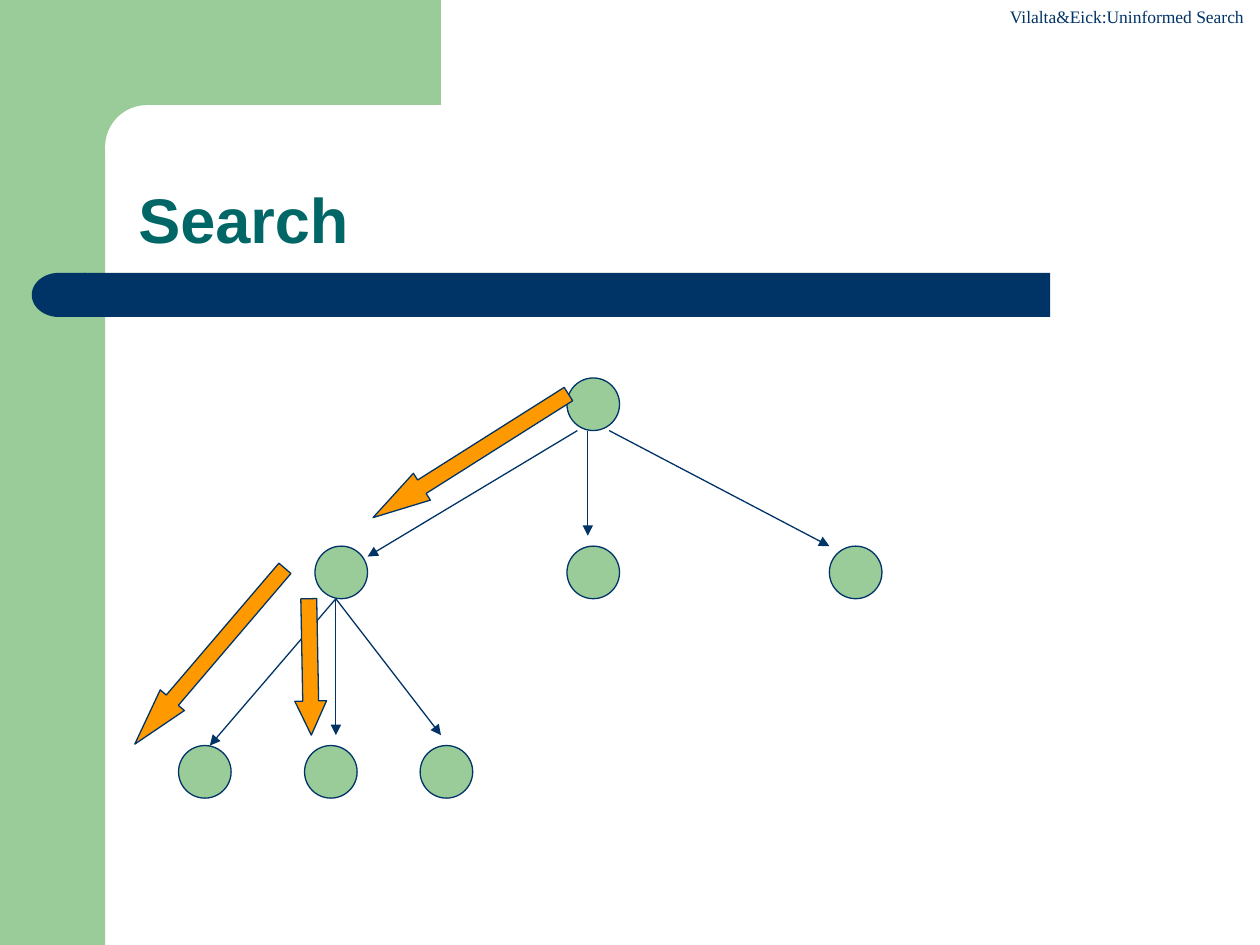
from lxml import etree
from pptx import Presentation
from pptx.dml.color import RGBColor
from pptx.enum.shapes import MSO_CONNECTOR, MSO_SHAPE
from pptx.enum.text import MSO_ANCHOR
from pptx.oxml.ns import qn
from pptx.util import Cm, Pt

RECTANGLE = MSO_SHAPE.RECTANGLE
ROUNDED = MSO_SHAPE.ROUNDED_RECTANGLE
DELAY = MSO_SHAPE.FLOWCHART_DELAY
OVAL = MSO_SHAPE.OVAL
DOWN_ARROW = MSO_SHAPE.DOWN_ARROW
STRAIGHT = MSO_CONNECTOR.STRAIGHT
TOP, BOTTOM = MSO_ANCHOR.TOP, MSO_ANCHOR.BOTTOM

COLORS = {
    "green": "99CC99",
    "white": "FFFFFF",
    "navy": "003366",
    "teal": "006666",
    "orange": "FF9900",
}
LINE_WIDTH = Pt(0.75)
NODE_SIZE = 1.06
ARROW_WIDTH = 0.64

# Left edges of the nodes on each level, keyed by the level's top
TREE_LEVELS = {
    7.62: [11.43],
    11.01: [6.35, 11.43, 16.72],
    15.03: [3.6, 6.14, 8.47],
}
EDGES = [
    ((11.64, 8.68), (7.41, 11.22)),
    ((11.85, 8.68), (11.85, 10.8)),
    ((12.28, 8.68), (16.72, 11.01)),
    ((6.77, 12.07), (4.23, 15.03)),
    ((6.77, 12.07), (6.77, 14.82)),
    ((6.77, 12.07), (8.89, 14.82)),
]
# Left, top, length, rotation
SEARCH_STEPS = [
    (9.17, 6.86, 4.66, 57.7),
    (3.91, 10.9, 4.66, 40.5),
    (5.93, 12.07, 2.75, 358.9),
]


def color(name):
    return RGBColor.from_string(COLORS[name])


def add_filled_shape(slide, kind, box, fill, outline=None):
    shape = slide.shapes.add_shape(kind, *map(Cm, box))
    shape.shadow.inherit = False
    shape.fill.solid()
    shape.fill.fore_color.rgb = color(fill)
    if outline:
        shape.line.color.rgb = color(outline)
        shape.line.width = LINE_WIDTH
    else:
        shape.line.fill.background()
    return shape


def add_text(slide, box, text, font_name, size, font_color,
             bold=False, anchor=TOP, wrap=True, spacing=1.0):
    frame = slide.shapes.add_textbox(*map(Cm, box)).text_frame
    frame.word_wrap = wrap
    frame.vertical_anchor = anchor
    paragraph = frame.paragraphs[0]
    paragraph.line_spacing = spacing
    run = paragraph.add_run()
    run.text = text
    run.font.name = font_name
    run.font.size = Pt(size)
    run.font.bold = bold
    run.font.color.rgb = color(font_color)


def add_edge(slide, start, end):
    """Draw a thin tree edge with an arrowhead at its end."""
    edge = slide.shapes.add_connector(STRAIGHT, *map(Cm, start + end))
    edge.line.color.rgb = color("navy")
    edge.line.width = LINE_WIDTH
    etree.SubElement(edge.line._get_or_add_ln(), qn("a:tailEnd"), type="triangle")
    etree.SubElement(edge._element.spPr, qn("a:effectLst"))


def add_search_step(slide, left, top, length, rotation):
    """Draw a block arrow whose head takes a quarter of its length."""
    arrow = add_filled_shape(slide, DOWN_ARROW, (left, top, ARROW_WIDTH, length),
                             "orange", "navy")
    arrow.adjustments[0] = 0.5
    arrow.adjustments[1] = length / ARROW_WIDTH / 4
    arrow.rotation = rotation


def add_frame(slide):
    """Draw the green corner, the title bar and the header."""
    add_filled_shape(slide, RECTANGLE, (0, 0, 2.12, 19.05), "green")
    add_filled_shape(slide, RECTANGLE, (1.9, 0, 6.99, 2.96), "green")
    corner = add_filled_shape(slide, ROUNDED, (2.12, 2.12, 14.18, 1.69), "white")
    corner.adjustments[0] = 0.5
    add_filled_shape(slide, RECTANGLE, (1.69, 5.5, 19.48, 0.89), "navy")
    bar_end = add_filled_shape(slide, DELAY, (0.64, 5.5, 1.09, 0.89), "navy")
    bar_end.rotation = 180
    add_text(slide, (20.11, 0, 5.29, 0.68), "Vilalta&Eick:Uninformed Search",
             "Times New Roman", 10, "navy", wrap=False)


def add_tree(slide):
    for top, lefts in TREE_LEVELS.items():
        for left in lefts:
            add_filled_shape(slide, OVAL, (left, top, NODE_SIZE, NODE_SIZE),
                             "green", "navy")
    for start, end in EDGES:
        add_edge(slide, start, end)
    for step in SEARCH_STEPS:
        add_search_step(slide, *step)


def main():
    presentation = Presentation()
    presentation.slide_width = Cm(25.4)
    presentation.slide_height = Cm(19.05)
    slide = presentation.slides.add_slide(presentation.slide_layouts[6])
    add_frame(slide)
    add_text(slide, (2.54, 2.12, 22.23, 3.18), "Search", "Arial", 36, "teal",
             bold=True, anchor=BOTTOM, spacing=0.9)
    add_tree(slide)
    presentation.save("out.pptx")


if __name__ == "__main__":
    main()
